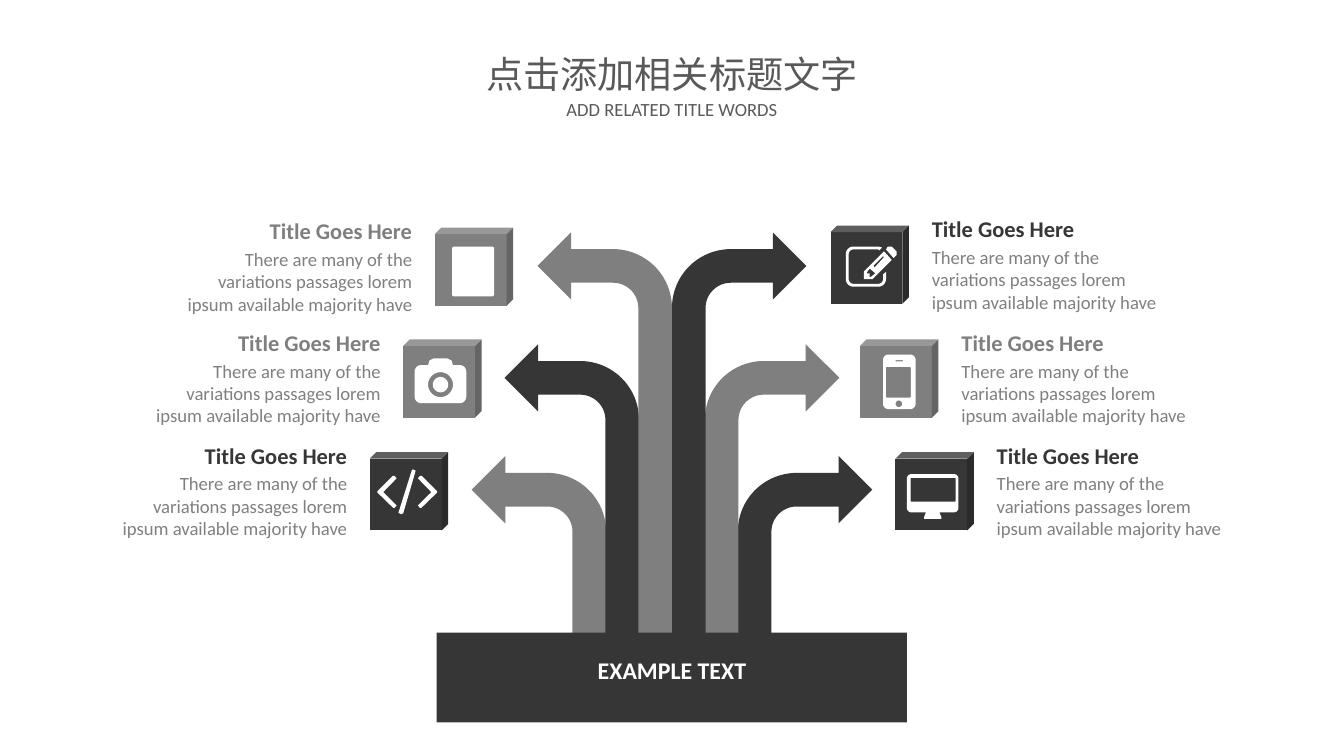
"""Build a slide of six callouts branching from a base block."""
from dataclasses import dataclass
from math import cos, radians, sin

from pptx import Presentation
from pptx.dml.color import RGBColor
from pptx.enum.shapes import MSO_SHAPE
from pptx.enum.text import PP_ALIGN
from pptx.shapes.autoshape import Shape
from pptx.slide import Slide
from pptx.text.text import TextFrame
from pptx.util import Pt

Point = tuple[float, float]
Contour = list[Point]

CUBE = MSO_SHAPE.CUBE
BENT_ARROW = MSO_SHAPE.BENT_ARROW
RECTANGLE = MSO_SHAPE.RECTANGLE
LEFT, CENTER, RIGHT = PP_ALIGN.LEFT, PP_ALIGN.CENTER, PP_ALIGN.RIGHT

DARK = RGBColor(0x36, 0x36, 0x36)
GRAY = RGBColor(0x7F, 0x7F, 0x7F)
BODY_GRAY = RGBColor(0x80, 0x80, 0x80)
TITLE_GRAY = RGBColor(0x59, 0x59, 0x59)
WHITE = RGBColor(0xFF, 0xFF, 0xFF)

FONT = "Calibri"
CALLOUT_TITLE = "Title Goes Here"
CALLOUT_BODY = "There are many of the variations passages lorem ipsum available majority have"
SLIDE_WIDTH, SLIDE_HEIGHT = 1012.5, 569.5
MIDDLE = SLIDE_WIDTH / 2
ARROW_WIDTH, ARROW_STEP = 101.3, 24.8
ARROW_TOP, ARROW_BOTTOM, ROW_STEP = 175, 478.5, 84.3
BADGE_SIZE = 59
TEXT_WIDTH, TEXT_HEIGHT = 177, 75
UNITS_PER_POINT = 100


def arc(x: float, y: float, radius: float, start: int, end: int) -> Contour:
    """Return points along an arc, with angles running clockwise from the right."""
    steps = max(6, abs(end - start) // 10)
    angles = [radians(start + (end - start) * i / steps) for i in range(steps + 1)]
    return [(x + radius * cos(angle), y + radius * sin(angle)) for angle in angles]


def rounded(left: float, top: float, right: float, bottom: float, radius: float) -> Contour:
    """Return the outline of a rounded rectangle."""
    return (arc(right - radius, bottom - radius, radius, 0, 90)
            + arc(left + radius, bottom - radius, radius, 90, 180)
            + arc(left + radius, top + radius, radius, 180, 270)
            + arc(right - radius, top + radius, radius, 270, 360))


MONITOR = [
    rounded(8.6, 16.6, 47.5, 45.4, 3.4),
    rounded(11.5, 19.4, 45.4, 37.4, 0.5),
    [(23, 45.4), (33.1, 45.4), (34.6, 49), (34.6, 50.4), (21.6, 50.4), (21.6, 49)],
]
PHONE = [
    rounded(17.3, 11.5, 41.8, 52.6, 4),
    rounded(19.4, 20.9, 38.2, 43.9, 0.7),
    rounded(26.6, 15.8, 32.4, 16.6, 0.4),
    arc(29.2, 48.6, 2.5, 0, 360),
]
PENCIL = [
    arc(36, 40.3, 5.8, 0, 90) + arc(17.3, 40.3, 5.8, 90, 180) + arc(17.3, 21.6, 5.8, 180, 270)
    + [(36, 15.8), (38.9, 16.6), (36.7, 18.7), (36, 18)]
    + arc(17.3, 21.6, 3.6, 270, 180) + arc(17.3, 40.3, 3.6, 180, 90) + arc(36, 40.3, 3.6, 90, 0)
    + [(39.6, 36.7), (41.8, 35)],
    [(46.1, 25.9), (31.7, 40.3), (25.2, 40.3), (25.2, 34.6), (40.3, 19.4)],
    [(33.8, 36), (29.5, 32.4), (27.4, 35.3), (27.4, 36), (29.5, 36), (29.5, 38.9), (30.2, 38.9)],
    [(39.6, 23), (32.4, 30.2), (33.1, 31.7), (40.3, 23.8)],
    [(47.5, 24.5), (41.8, 18), (43.2, 15.8), (46.1, 15.8), (49.7, 19.4), (49.7, 22.3)],
]
PLAIN_PANEL = [rounded(13, 14.4, 44.6, 51.8, 1.4)]
CHEVRON = [(18.7, 42), (17.6, 42), (5.8, 30.5), (5.8, 29.5), (17.3, 18), (18.7, 18),
           (20.2, 19.8), (10.1, 30.2), (20.2, 40.3)]
CODE = [
    CHEVRON,
    [(56.5 - x, y) for x, y in CHEVRON],
    [(25.2, 46.1), (23.8, 46.8), (21.6, 45.7), (31.7, 13.7), (32.4, 13), (34.6, 14)],
]
CAMERA = [
    rounded(8.6, 19.4, 47.5, 48.2, 5),
    [(18.7, 19.4), (19.8, 16), (23, 14.4), (33.1, 14.4), (36.4, 16), (37.4, 19.4)],
    arc(28.1, 34.2, 9.4, 0, 360),
    arc(28.1, 34.2, 5.8, 0, 360),
]


@dataclass(frozen=True)
class Callout:
    """One badge with its text."""
    left: float
    top: float
    color: RGBColor
    icon: list[Contour]
    alignment: PP_ALIGN


@dataclass(frozen=True)
class Label:
    """One centred line of text."""
    text: str
    left: float
    top: float
    width: float
    height: float
    size: float
    color: RGBColor
    bold: bool


CALLOUTS = [
    Callout(625.7, 169.9, DARK, PENCIL, LEFT),
    Callout(648, 255.6, GRAY, PHONE, LEFT),
    Callout(674.6, 340.6, DARK, MONITOR, LEFT),
    Callout(327.6, 171.4, GRAY, PLAIN_PANEL, RIGHT),
    Callout(303.8, 255.6, GRAY, CAMERA, RIGHT),
    Callout(278.6, 340.6, DARK, CODE, RIGHT),
]
LABELS = [
    Label("EXAMPLE TEXT", 396.5, 490.3, 219.5, 29, 18, WHITE, True),
    Label("点击添加相关标题文字", 357.2, 34.9, 298, 41.8, 28, TITLE_GRAY, False),
    Label("ADD RELATED TITLE WORDS", 417, 70.2, 178.5, 24.5, 14, TITLE_GRAY, False),
]


def paint(shape: Shape, color: RGBColor) -> None:
    """Give a shape a flat fill without line or shadow."""
    shape.shadow.inherit = False
    shape.fill.solid()
    shape.fill.fore_color.rgb = color
    shape.line.fill.background()


def write_lines(text_frame: TextFrame, lines: list[tuple[str, float, RGBColor, bool]],
                alignment: PP_ALIGN) -> None:
    """Write one formatted paragraph for each line."""
    text_frame.text = "\n".join(line[0] for line in lines)
    for paragraph, (_, size, color, bold) in zip(text_frame.paragraphs, lines):
        paragraph.alignment = alignment
        font = paragraph.runs[0].font
        font.name, font.size, font.bold = FONT, Pt(size), bold
        font.color.rgb = color


def add_arrow(slide: Slide, row: int, color: RGBColor, mirrored: bool) -> None:
    """Add a branch that bends away from the middle of the slide."""
    offset = ARROW_STEP * row
    left = MIDDLE - ARROW_WIDTH - offset if mirrored else MIDDLE + offset
    top = ARROW_TOP + ROW_STEP * row
    arrow = slide.shapes.add_shape(BENT_ARROW, Pt(left), Pt(top), Pt(ARROW_WIDTH),
                                   Pt(ARROW_BOTTOM - top))
    paint(arrow, color)
    if mirrored:
        arrow._element.spPr.get_or_add_xfrm().set("flipH", "1")


def add_callout(slide: Slide, callout: Callout) -> None:
    """Add a cube badge, its icon and the text beside it."""
    group = slide.shapes.add_group_shape()
    cube = group.shapes.add_shape(CUBE, Pt(callout.left), Pt(callout.top),
                                  Pt(BADGE_SIZE), Pt(BADGE_SIZE))
    cube.adjustments[0] = 0.083
    paint(cube, callout.color)
    contours = [[(x * UNITS_PER_POINT, y * UNITS_PER_POINT) for x, y in contour]
                for contour in callout.icon]
    builder = group.shapes.build_freeform(*contours[0][0], scale=Pt(1) / UNITS_PER_POINT)
    builder.add_line_segments(contours[0][1:], close=True)
    for contour in contours[1:]:
        builder.move_to(*contour[0])
        builder.add_line_segments(contour[1:], close=True)
    paint(builder.convert_to_shape(Pt(callout.left), Pt(callout.top)), WHITE)

    offset = 76.3 if callout.alignment == LEFT else -17 - TEXT_WIDTH
    text_box = slide.shapes.add_textbox(Pt(callout.left + offset), Pt(callout.top - 7.9),
                                        Pt(TEXT_WIDTH), Pt(TEXT_HEIGHT))
    text_frame = text_box.text_frame
    text_frame.word_wrap = True
    text_frame.margin_left = text_frame.margin_right = Pt(0)
    text_frame.margin_top = text_frame.margin_bottom = Pt(0)
    write_lines(text_frame, [(CALLOUT_TITLE, 16.9, callout.color, True),
                             (CALLOUT_BODY, 14.1, BODY_GRAY, False)], callout.alignment)
    text_frame.paragraphs[1].space_before = Pt(2.8)


def add_label(slide: Slide, label: Label) -> None:
    """Add a centred text box."""
    text_box = slide.shapes.add_textbox(Pt(label.left), Pt(label.top),
                                        Pt(label.width), Pt(label.height))
    text_box.text_frame.word_wrap = True
    write_lines(text_box.text_frame, [(label.text, label.size, label.color, label.bold)], CENTER)


def main() -> None:
    """Build and save the presentation."""
    presentation = Presentation()
    presentation.slide_width, presentation.slide_height = Pt(SLIDE_WIDTH), Pt(SLIDE_HEIGHT)
    slide = presentation.slides.add_slide(presentation.slide_layouts[6])
    for mirrored, colors in ((False, (DARK, GRAY, DARK)), (True, (GRAY, DARK, GRAY))):
        for row in (2, 1, 0):
            add_arrow(slide, row, colors[row], mirrored)
    for callout in CALLOUTS:
        add_callout(slide, callout)
    base = slide.shapes.add_shape(RECTANGLE, Pt(329), Pt(476.6), Pt(354.2), Pt(67.7))
    paint(base, DARK)
    for label in LABELS:
        add_label(slide, label)
    presentation.save("out.pptx")


if __name__ == "__main__":
    main()
